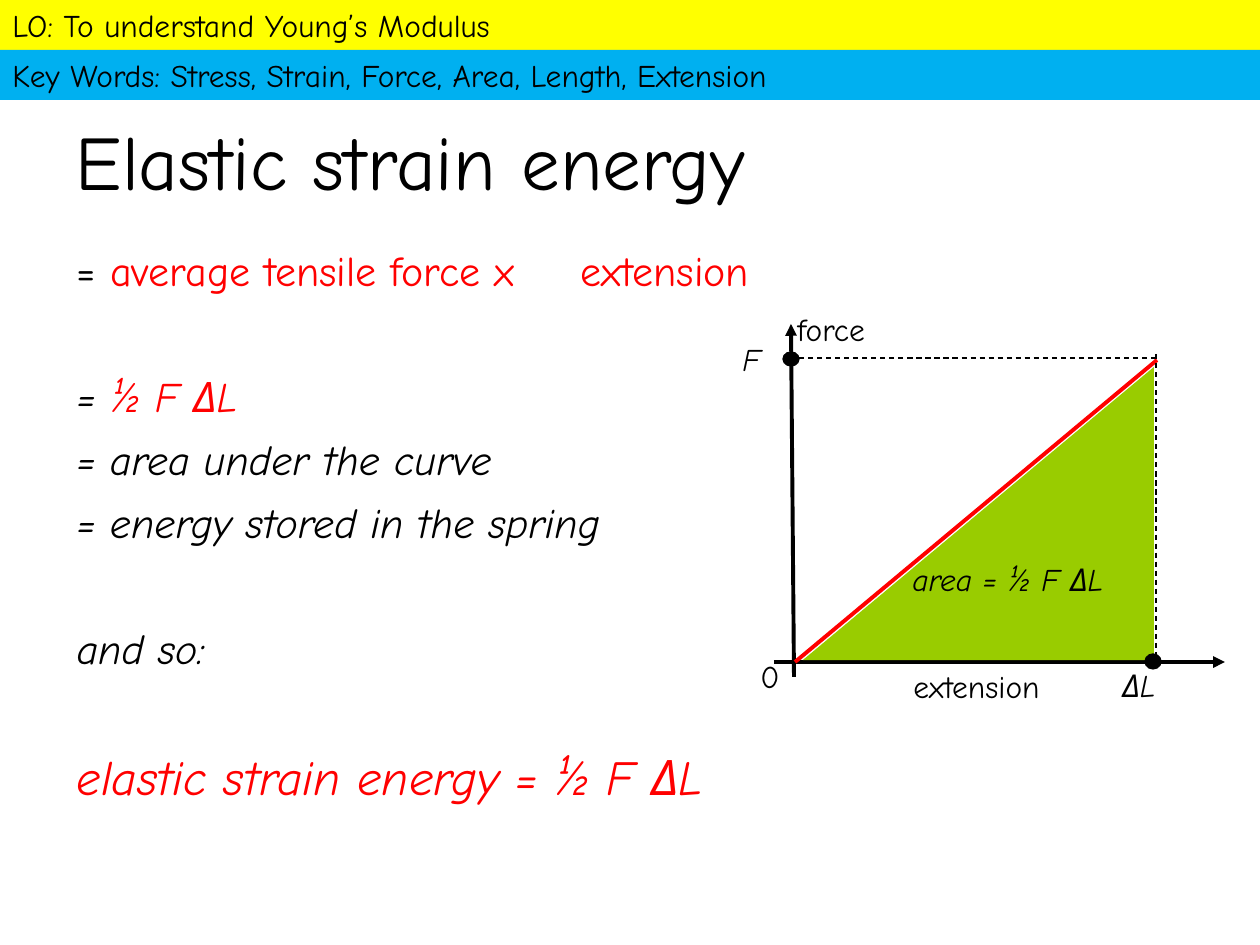
"""Build the elastic strain energy slide with its force-extension graph."""
from lxml import etree
from pptx import Presentation
from pptx import util as u
from pptx.dml.color import RGBColor
from pptx.enum import dml, shapes, text
from pptx.oxml.ns import qn

PX = 914400 / 126
FONT = "Comic Neue"
BLACK = RGBColor(0x00, 0x00, 0x00)
RED = RGBColor(0xFF, 0x00, 0x00)
YELLOW = RGBColor(0xFF, 0xFF, 0x00)
BLUE = RGBColor(0x00, 0xB0, 0xF0)
GREEN = RGBColor(0x99, 0xCC, 0x00)


def px(*lengths):
    return [u.Emu(round(length * PX)) for length in lengths]


def style(font, size, color=BLACK, italic=False):
    font.name, font.size, font.italic = FONT, u.Pt(size), italic
    font.color.rgb = color


presentation = Presentation()
presentation.slide_width, presentation.slide_height = px(1260, 945)
slide = presentation.slides.add_slide(presentation.slide_layouts[1])

title, body = slide.placeholders
title.left, title.top, title.width, title.height = px(63, 87, 1134, 158)
title.text_frame.text = "Elastic strain energy"
title.text_frame.vertical_anchor = text.MSO_ANCHOR.MIDDLE
title.text_frame.auto_size = text.MSO_AUTO_SIZE.NONE
paragraph = title.text_frame.paragraphs[0]
paragraph.alignment = text.PP_ALIGN.LEFT
paragraph.line_spacing = 0.9
style(paragraph.runs[0].font, 44)

body.left, body.top, body.width, body.height = px(64, 244, 784, 576)
body.text_frame.auto_size = text.MSO_AUTO_SIZE.NONE
GAP, WIDE_GAP = 10, 46
statements = [
    (0, 24, False, [("= ", BLACK), ("average tensile force x \textension", RED)]),
    (WIDE_GAP, 24, True, [("= ", BLACK), ("½ F ΔL", RED)]),
    (GAP, 24, True, [("= area under the curve", BLACK)]),
    (GAP, 24, True, [("= energy stored in the spring", BLACK)]),
    (WIDE_GAP, 24, True, [("and so:", BLACK)]),
    (WIDE_GAP, 28, True, [("elastic strain energy = ½ F ΔL", RED)]),
]
for index, (space, size, italic, pieces) in enumerate(statements):
    paragraph = body.text_frame.paragraphs[0] if index == 0 else body.text_frame.add_paragraph()
    properties = paragraph._p.get_or_add_pPr()
    properties.set("marL", "0")
    properties.set("indent", "0")
    etree.SubElement(properties, qn("a:buNone"))
    paragraph.line_spacing = 0.9
    paragraph.space_before = u.Pt(space)
    for words, color in pieces:
        run = paragraph.add_run()
        run.text = words
        style(run.font, size, color, italic)

banners = [
    ("LO: To understand Young’s Modulus", YELLOW),
    ("Key Words: Stress, Strain, Force, Area, Length, Extension", BLUE),
]
for row, (words, color) in enumerate(banners):
    banner = slide.shapes.add_shape(shapes.MSO_SHAPE.RECTANGLE, *px(0, row * 50, 1260, 50))
    banner.shadow.inherit = False
    banner.fill.solid()
    banner.fill.fore_color.rgb = color
    banner.line.fill.background()
    banner.text_frame.text = words
    paragraph = banner.text_frame.paragraphs[0]
    paragraph.alignment = text.PP_ALIGN.LEFT
    style(paragraph.runs[0].font, 18)

graph_lines = [
    ((794, 677, 791, 324), BLACK, 2.25, "arrow"),
    ((774, 662, 1225, 662), BLACK, 2.25, "arrow"),
    ((795, 662, 1157, 360), RED, 2.25, "plain"),
    ((790, 358, 1158, 358), BLACK, 0.75, "dash"),
    ((1156, 354, 1156, 662), BLACK, 0.75, "dash"),
]
for ends, color, width, kind in graph_lines:
    line = slide.shapes.add_connector(shapes.MSO_CONNECTOR.STRAIGHT, *px(*ends))
    line.line.color.rgb = color
    line.line.width = u.Pt(width)
    if kind == "dash":
        line.line.dash_style = dml.MSO_LINE.DASH
    elif kind == "arrow":
        etree.SubElement(line.line._get_or_add_ln(), qn("a:tailEnd"), type="triangle")
    etree.SubElement(line._element.spPr, qn("a:effectLst"))

graph_shapes = [
    (shapes.MSO_SHAPE.RIGHT_TRIANGLE, (803, 367, 351, 293), GREEN),
    (shapes.MSO_SHAPE.OVAL, (1145, 654, 16, 15), BLACK),
    (shapes.MSO_SHAPE.OVAL, (783, 352, 16, 14), BLACK),
]
for kind, place, color in graph_shapes:
    shape = slide.shapes.add_shape(kind, *px(*place))
    shape.shadow.inherit = False
    shape.fill.solid()
    shape.fill.fore_color.rgb = color
    if kind == shapes.MSO_SHAPE.RIGHT_TRIANGLE:
        shape._element.spPr.xfrm.set("flipH", "1")
        shape.line.fill.background()
    else:
        shape.line.color.rgb = color
        shape.line.width = u.Pt(0.75)

graph_labels = [
    ("0", (748, 651, 58, 60), False),
    ("F", (730, 334, 58, 71), True),
    ("area = ½ F ΔL", (900, 554, 255, 53), True),
    ("ΔL", (1110, 660, 86, 60), True),
    ("force", (785, 304, 131, 49), False),
    ("extension", (901, 661, 174, 50), False),
]
for words, place, italic in graph_labels:
    label = slide.shapes.add_textbox(*px(*place))
    label.text_frame.word_wrap = True
    label.text_frame.text = words
    style(label.text_frame.paragraphs[0].runs[0].font, 18, BLACK, italic)

presentation.save("out.pptx")
